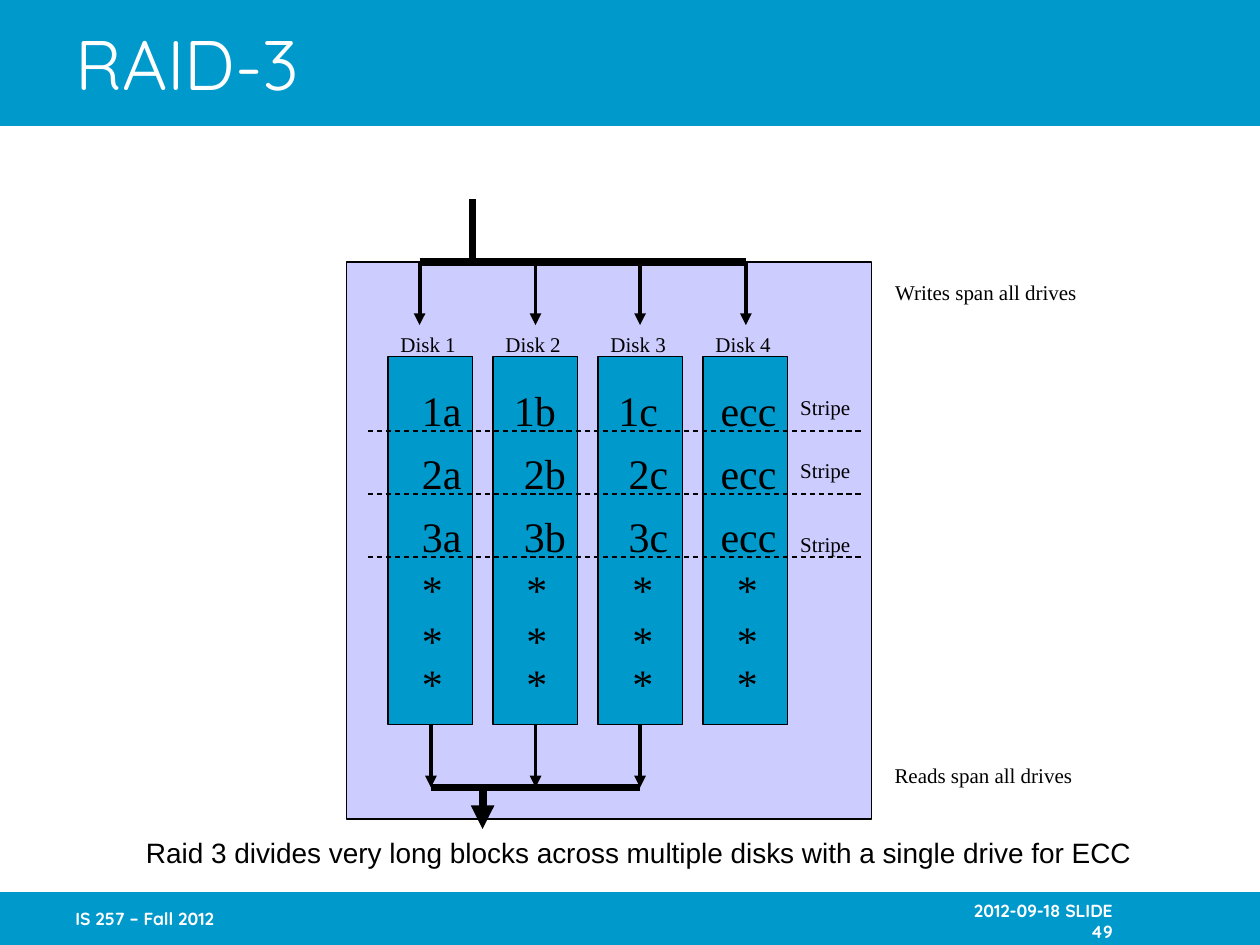
from lxml import etree
from pptx import Presentation
from pptx.dml.color import RGBColor
from pptx.enum.dml import MSO_LINE
from pptx.enum.shapes import MSO_CONNECTOR, MSO_SHAPE
from pptx.enum.text import MSO_ANCHOR, PP_ALIGN
from pptx.oxml.ns import qn
from pptx.util import Inches, Pt

RECTANGLE = MSO_SHAPE.RECTANGLE
STRAIGHT = MSO_CONNECTOR.STRAIGHT
DASH = MSO_LINE.DASH
TOP, MIDDLE, BOTTOM = MSO_ANCHOR.TOP, MSO_ANCHOR.MIDDLE, MSO_ANCHOR.BOTTOM
LEFT, CENTER, RIGHT = PP_ALIGN.LEFT, PP_ALIGN.CENTER, PP_ALIGN.RIGHT

BLUE, LILAC, BLACK, WHITE = "0099CC", "CCCCFF", "000000", "FFFFFF"
SERIF, SANS, BRAND_FONT = "Times New Roman", "Arial", "Quicksand"

# Content
TITLE = "RAID-3"
COURSE = "IS 257 – Fall 2012"
SLIDE_STAMP = "2012-09-18 SLIDE 49"
CAPTION = "Raid 3 divides very long blocks across multiple disks with a single drive for ECC"
DISKS = ["Disk 1", "Disk 2", "Disk 3", "Disk 4"]
STAR_TABS = (0.83, 1.67, 2.5)
BLOCK_TABS = (0.81, 1.64, 2.37)
# Row top, cells, tab stops from the start of the text
BLOCK_ROWS = [
    (3.0, ["1a", "1b", "1c", "ecc"], (0.73, 1.56, 2.37)),
    (3.5, ["2a", "2b", "2c", "ecc"], BLOCK_TABS),
    (4.0, ["3a", "3b", "3c", "ecc"], BLOCK_TABS),
    (4.42, ["*"] * 4, STAR_TABS),
    (4.83, ["*"] * 4, STAR_TABS),
    (5.17, ["*"] * 4, STAR_TABS),
]
# Text, left, top, width
SIDE_LABELS = [
    ("Writes span all drives", 7, 2.17, 1.65),
    ("Reads span all drives", 7, 6, 1.61),
    ("Stripe", 6.25, 3.08, 0.6),
    ("Stripe", 6.25, 3.58, 0.6),
    ("Stripe", 6.25, 4.17, 0.6),
]

# Geometry
DISK_LEFT, DISK_TOP, DISK_PITCH = 3.08, 2.83, 2.5 / 3
DISK_WIDTH, DISK_HEIGHT = 0.67, 2.92
DISK_BOTTOM = DISK_TOP + DISK_HEIGHT
WRITE_BUS, READ_BUS = 2.08, 6.25
WRITE_ARROWS = [3.33, 4.25, 5.08, 5.92]
READ_ARROWS = [3.42, 4.25, 5.08]
STRIPE_LINES = [3.42, 3.92, 4.42]

presentation = Presentation()
presentation.slide_width, presentation.slide_height = Inches(10), Inches(7.5)
slide = presentation.slides.add_slide(presentation.slide_layouts[6])


def color(hex_string):
    return RGBColor.from_string(hex_string)


def add_box(left, top, width, height, fill, outlined=True):
    shape = slide.shapes.add_shape(
        RECTANGLE, Inches(left), Inches(top), Inches(width), Inches(height))
    shape.shadow.inherit = False
    shape.fill.solid()
    shape.fill.fore_color.rgb = color(fill)
    if outlined:
        shape.line.color.rgb = color(BLACK)
        shape.line.width = Pt(0.75)
    else:
        shape.line.fill.background()


def add_line(start, end, width, arrow=False, dash=None):
    line = slide.shapes.add_connector(
        STRAIGHT, *(Inches(value) for value in (*start, *end)))
    line.line.color.rgb = color(BLACK)
    line.line.width = Pt(width)
    if dash:
        line.line.dash_style = dash
    if arrow:
        etree.SubElement(line.line._get_or_add_ln(), qn("a:tailEnd"), type="triangle")
    etree.SubElement(line._element.spPr, qn("a:effectLst"))


def add_text(text, left, top, width, height, size, font=SERIF, fill=BLACK, bold=False,
             align=LEFT, anchor=TOP, wrap=False, right=0.1, bottom=0.05, tabs=()):
    box = slide.shapes.add_textbox(
        Inches(left), Inches(top), Inches(width), Inches(height))
    frame = box.text_frame
    frame.word_wrap = wrap
    frame.vertical_anchor = anchor
    frame.margin_right, frame.margin_bottom = Inches(right), Inches(bottom)
    paragraph = frame.paragraphs[0]
    paragraph.alignment = align
    if tabs:
        tab_list = etree.SubElement(paragraph._p.get_or_add_pPr(), qn("a:tabLst"))
        for position in tabs:
            etree.SubElement(tab_list, qn("a:tab"), pos=str(Inches(position)), algn="l")
    run = paragraph.add_run()
    run.text = text
    run.font.size, run.font.name, run.font.bold = Pt(size), font, bold
    run.font.color.rgb = color(fill)


# Header and footer bands
add_box(0, 0, 10, 1, BLUE, outlined=False)
add_box(0, 7.08, 10, 0.42, BLUE, outlined=False)
add_text(TITLE, 0.5, 0, 8.5, 1, 40, BRAND_FONT, WHITE, anchor=MIDDLE, wrap=True)
add_text(COURSE, 0.5, 7.08, 2.08, 0.42, 10, BRAND_FONT, WHITE, True,
         anchor=MIDDLE, wrap=True)
add_text(SLIDE_STAMP, 7.42, 7.08, 2.08, 0.42, 10, BRAND_FONT, WHITE, True,
         align=RIGHT, anchor=BOTTOM, wrap=True, right=0.67, bottom=0.02)

# Array enclosure and disks
add_box(2.75, WRITE_BUS, 4.17, 4.42, LILAC)
for index, name in enumerate(DISKS):
    left = DISK_LEFT + index * DISK_PITCH
    add_box(left, DISK_TOP, DISK_WIDTH, DISK_HEIGHT, BLUE)
    add_text(name, left, 2.58, 0.64, 0.3, 12)

# Data blocks, one row per stripe
for top, cells, tabs in BLOCK_ROWS:
    add_text("\t".join(cells), 3.25, top, 3.02, 0.5, 24, wrap=True, right=0, tabs=tabs)

# Side labels and stripe lines
for text, left, top, width in SIDE_LABELS:
    add_text(text, left, top, width, 0.3, 12, align=CENTER)
for y in STRIPE_LINES:
    add_line((2.92, y), (6.83, y), 0.75, dash=DASH)

# Write path
for x in WRITE_ARROWS:
    add_line((x, WRITE_BUS), (x, 2.58), 2.25, arrow=True)
add_line((WRITE_ARROWS[0], WRITE_BUS), (WRITE_ARROWS[-1], WRITE_BUS), 4.5)
add_line((3.75, 1.58), (3.75, WRITE_BUS), 4.5)

# Read path
for x in READ_ARROWS:
    add_line((x, DISK_BOTTOM), (x, READ_BUS), 2.25, arrow=True)
add_line((READ_ARROWS[0], READ_BUS), (READ_ARROWS[-1], READ_BUS), 4.5)
add_line((3.83, READ_BUS), (3.83, 6.58), 4.5, arrow=True)

# Caption
add_text(CAPTION, 1.05, 6.58, 8.04, 0.37, 16, SANS, align=CENTER)

presentation.save("out.pptx")
